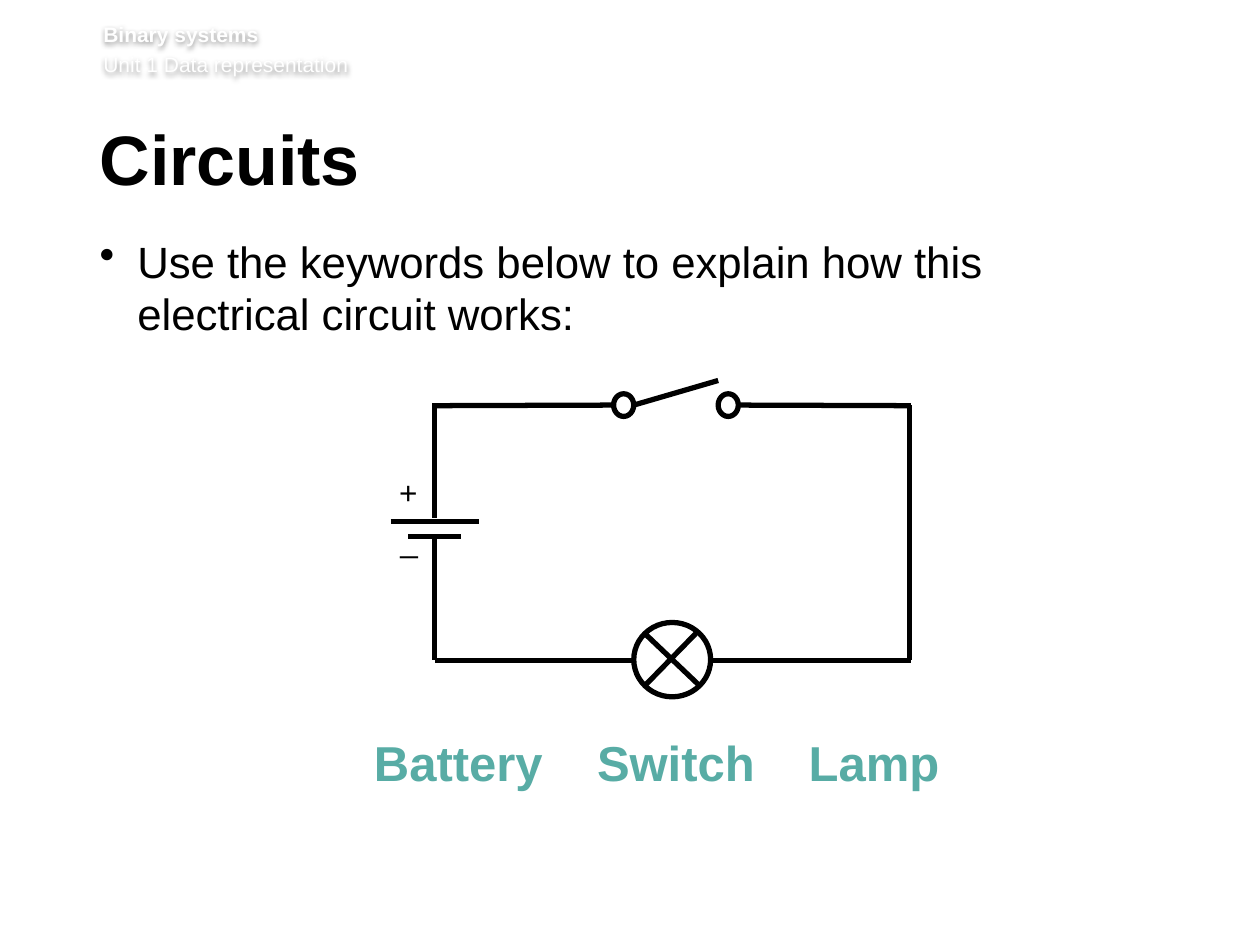
from dataclasses import dataclass

from lxml import etree
from pptx import Presentation
from pptx.dml.color import RGBColor
from pptx.enum.shapes import MSO_CONNECTOR, MSO_SHAPE
from pptx.enum.text import MSO_ANCHOR, PP_ALIGN
from pptx.oxml.ns import qn
from pptx.util import Inches, Pt

LINE = MSO_CONNECTOR.STRAIGHT
OVAL = MSO_SHAPE.OVAL
TOP = MSO_ANCHOR.TOP
LEFT = PP_ALIGN.LEFT

WIDE, HIGH = Inches(10), Inches(7.5)
COLS, ROWS = 100, 75  # square grid cells
BLACK, WHITE, TEAL = "000000", "FFFFFF", "58ACA5"


@dataclass
class Box:
    x: float
    y: float
    w: float
    h: float


@dataclass
class Wire:
    x1: float
    y1: float
    x2: float
    y2: float


@dataclass
class Label:
    text: str
    box: Box
    size: float
    color: str = BLACK
    bold: bool = False
    inset: tuple = (0.1, 0.05, 0.1, 0.05)
    wrap: bool = True


def col(n: float) -> int:
    return round(WIDE * n / COLS)


def row(n: float) -> int:
    return round(HIGH * n / ROWS)


def place(box: Box) -> tuple:
    return col(box.x), row(box.y), col(box.w), row(box.h)


def paint(part, color: str) -> None:
    part.fill.solid()
    part.fill.fore_color.rgb = RGBColor.from_string(color)


def fill_text(shape, label: Label):
    """Write a label into a shape and format its runs."""
    frame = shape.text_frame
    frame.text = label.text
    frame.word_wrap = label.wrap
    frame.vertical_anchor = TOP
    (frame.margin_left, frame.margin_top,
     frame.margin_right, frame.margin_bottom) = map(Inches, label.inset)
    for para in frame.paragraphs:
        para.alignment = LEFT
        for run in para.runs:
            run.font.name = "Arial"
            run.font.size = Pt(label.size)
            run.font.bold = label.bold
            paint(run.font, label.color)
    return frame


def add_label(slide, label: Label):
    shape = slide.shapes.add_textbox(*place(label.box))
    fill_text(shape, label)
    return shape


def add_wire(slide, wire: Wire) -> None:
    line = slide.shapes.add_connector(
        LINE, col(wire.x1), row(wire.y1), col(wire.x2), row(wire.y2))
    line.line.width = Pt(3)
    line.line.color.rgb = RGBColor.from_string(BLACK)
    etree.SubElement(line._element.spPr, qn("a:effectLst"))


def add_ring(slide, box: Box) -> None:
    ring = slide.shapes.add_shape(OVAL, *place(box))
    ring.shadow.inherit = False
    paint(ring, WHITE)
    ring.line.width = Pt(3)
    ring.line.color.rgb = RGBColor.from_string(BLACK)


def add_shade(shape) -> None:
    """Put a soft shadow behind the text of an unfilled box."""
    list_ = etree.SubElement(shape._element.spPr, qn("a:effectLst"))
    shade = etree.SubElement(list_, qn("a:outerShdw"), blurRad="38100",
                             dist="12700", dir="5400000", algn="t", rotWithShape="0")
    tone = etree.SubElement(shade, qn("a:srgbClr"), val=BLACK)
    etree.SubElement(tone, qn("a:alpha"), val="40000")


def add_bullet(para, indent: float) -> None:
    props = para._p.get_or_add_pPr()
    props.set("marL", str(Inches(indent)))
    props.set("indent", str(-Inches(indent)))
    etree.SubElement(props, qn("a:buChar"), char="•")


def add_tabs(para, stops: list) -> None:
    tabs = etree.SubElement(para._p.get_or_add_pPr(), qn("a:tabLst"))
    for stop in stops:
        etree.SubElement(tabs, qn("a:tab"), pos=str(Inches(stop)), algn="l")


HEAD = Label("Binary systems\nUnit 1 Data representation",
             Box(8.2, 1.7, 88.2, 4.9), 12, WHITE, inset=(0, 0, 0, 0.05))
TITLE = Label("Circuits", Box(7.9, 9.9, 85.5, 7.3), 40, bold=True,
              inset=(0, 0.05, 0.1, 0.05))
TASK = Label("Use the keywords below to explain how this electrical circuit works:",
             Box(7.9, 18.6, 85.3, 37.8), 25, inset=(0, 0, 0.1, 0.05))
WORDS = Label("Battery\tSwitch\tLamp", Box(28.7, 57.65, 47.4, 5.7), 28, TEAL, True)
SIGNS = [Label("_", Box(30.8, 40.85, 3.4, 4), 18, wrap=False),
         Label("+", Box(30.7, 37.05, 3.5, 4), 18, wrap=False)]

# Circuit sides and the rings on them
WEST, EAST, NORTH, SOUTH = 34.5, 72.2, 32.15, 52.4
PLUS, MINUS = 41.4, 42.6
LAMP = Box(50.3, 49.4, 6.1, 5.9)
PINS = [Box(x, 31.25, 1.6, 1.8) for x in (48.7, 57)]
WIRES = [
    Wire(EAST, NORTH, EAST, SOUTH),
    Wire(WEST, 32, WEST, 41.1),
    Wire(WEST, MINUS, WEST, SOUTH),
    Wire(WEST, 32.2, PINS[0].x, NORTH),
    Wire(PINS[1].x + PINS[1].w, NORTH, EAST + 0.1, 32.2),
    Wire(WEST, SOUTH, LAMP.x, SOUTH),
    Wire(LAMP.x + LAMP.w, SOUTH, EAST + 0.1, SOUTH),
    Wire(PINS[0].x + PINS[0].w, NORTH, PINS[1].x, 30.2),  # switch arm
    Wire(WEST - 3.5, PLUS, WEST + 3.5, PLUS),  # battery plates
    Wire(WEST - 2.1, MINUS, WEST + 2.1, MINUS),
]
CROSS = [Wire(51.2, 50.3, 55.5, 54.4), Wire(55.3, 50.2, 51.2, 54.4)]


def main() -> None:
    deck = Presentation()
    deck.slide_width, deck.slide_height = WIDE, HIGH
    slide = deck.slides.add_slide(deck.slide_layouts[5])

    # Header
    head = add_label(slide, HEAD)
    add_shade(head)
    first, second = head.text_frame.paragraphs
    first.runs[0].font.bold = True
    second.space_before = Pt(2.9)

    # Title and task
    title = slide.shapes.title
    title.left, title.top, title.width, title.height = place(TITLE.box)
    fill_text(title, TITLE).paragraphs[0].line_spacing = Pt(39)
    task = add_label(slide, TASK)
    add_bullet(task.text_frame.paragraphs[0], 0.3)

    # Circuit
    for wire in WIRES:
        add_wire(slide, wire)
    for ring in [LAMP, *PINS]:
        add_ring(slide, ring)
    for wire in CROSS:
        add_wire(slide, wire)
    for sign in SIGNS:
        add_label(slide, sign)

    # Keywords
    words = add_label(slide, WORDS)
    add_tabs(words.text_frame.paragraphs[0], [1.77, 3.45])

    deck.save("out.pptx")


if __name__ == "__main__":
    main()
